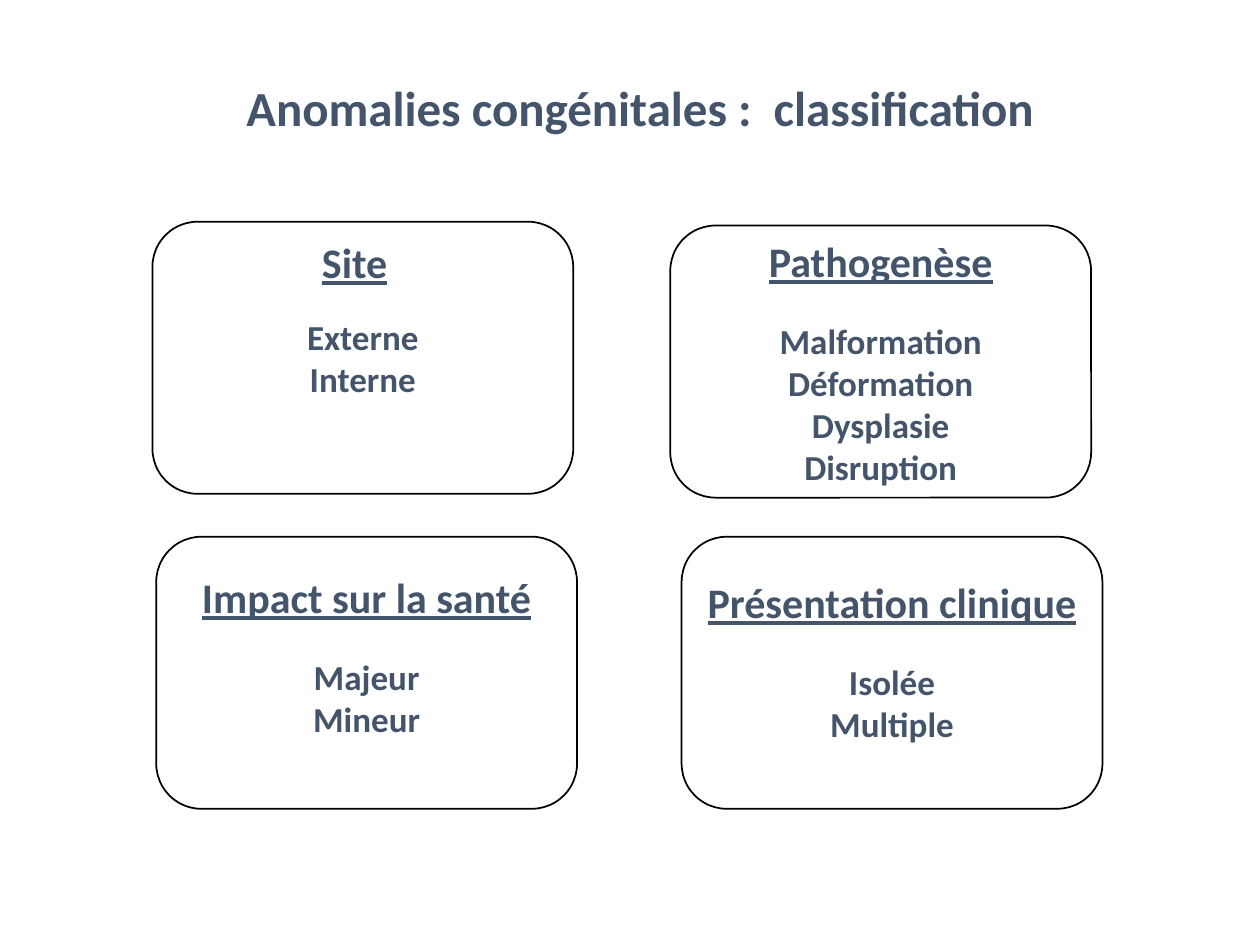
from dataclasses import dataclass

from pptx import Presentation
from pptx.dml.color import RGBColor
from pptx.enum.shapes import MSO_SHAPE as Shape
from pptx.enum.text import MSO_ANCHOR as Anchor, PP_ALIGN as Align
from pptx.util import Inches, Pt

COLORS = {"text": "44546A", "fill": "FFFFFF", "line": "000000"}
FONT = "Calibri"
CARD_W, CARD_H = 3.34, 2.16
HEADING_SIZE, ITEM_SIZE, HEADING_GAP = 24, 20, 19.5


@dataclass
class Card:
    left: float
    top: float
    heading: str
    items: list[str]
    lift: float = 0  # extra bottom inset that raises the centred text


def color(name: str) -> RGBColor:
    return RGBColor.from_string(COLORS[name])


def format_paragraph(p, text: str, size: float, underline: bool = False) -> None:
    p.text = text
    p.alignment = Align.CENTER
    font = p.font
    font.name, font.size, font.bold = FONT, Pt(size), True
    font.underline = underline
    font.color.rgb = color("text")


def add_card(slide, card: Card) -> None:
    s = slide.shapes.add_shape(
        Shape.ROUNDED_RECTANGLE, Inches(card.left), Inches(card.top),
        Inches(CARD_W), Inches(CARD_H))
    s.shadow.inherit = False
    s.fill.solid()
    s.fill.fore_color.rgb = color("fill")
    s.line.color.rgb = color("line")
    s.line.width = Pt(1)

    tf = s.text_frame
    tf.word_wrap = True
    tf.vertical_anchor = Anchor.MIDDLE
    tf.margin_left = tf.margin_right = Inches(0.05)
    tf.margin_bottom = Inches(0.05 + card.lift)
    lines = [card.heading] if card.heading else []
    for i, text in enumerate(lines + card.items):
        p = tf.paragraphs[0] if i == 0 else tf.add_paragraph()
        is_heading = text == card.heading
        format_paragraph(p, text, HEADING_SIZE if is_heading else ITEM_SIZE, is_heading)
        if card.heading and i == 1:
            p.space_before = Pt(HEADING_GAP)


def add_label(slide, text: str, left: float, top: float, width: float, height: float) -> None:
    s = slide.shapes.add_textbox(Inches(left), Inches(top), Inches(width), Inches(height))
    s.text_frame.word_wrap = False
    format_paragraph(s.text_frame.paragraphs[0], text, HEADING_SIZE, True)


CARDS = [
    Card(1.21, 1.76, "", ["Externe", "Interne"]),  # its heading is a separate label
    Card(5.32, 1.79, "Pathogenèse",
         ["Malformation", "Déformation", "Dysplasie", "Disruption"]),
    Card(1.24, 4.26, "Impact sur la santé", ["Majeur", "Mineur"], 0.27),
    Card(5.41, 4.26, "Présentation clinique", ["Isolée", "Multiple"], 0.19),
]


def main() -> None:
    prs = Presentation()
    prs.slide_width, prs.slide_height = Inches(10), Inches(7.5)
    slide = prs.slides.add_slide(prs.slide_layouts[5])

    # Title
    title = slide.shapes.title
    title.left, title.top = Inches(0.58), Inches(0.42)
    title.width, title.height = Inches(9), Inches(0.92)
    title.text_frame.vertical_anchor = Anchor.MIDDLE
    p = title.text_frame.paragraphs[0]
    format_paragraph(p, "Anomalies congénitales :  classification", 28)
    p.line_spacing = 0.9

    # Classification cards
    for card in CARDS:
        add_card(slide, card)

    # Heading of the first card
    add_label(slide, "Site", 2.45, 1.83, 0.73, 0.5)

    prs.save("out.pptx")


if __name__ == "__main__":
    main()
